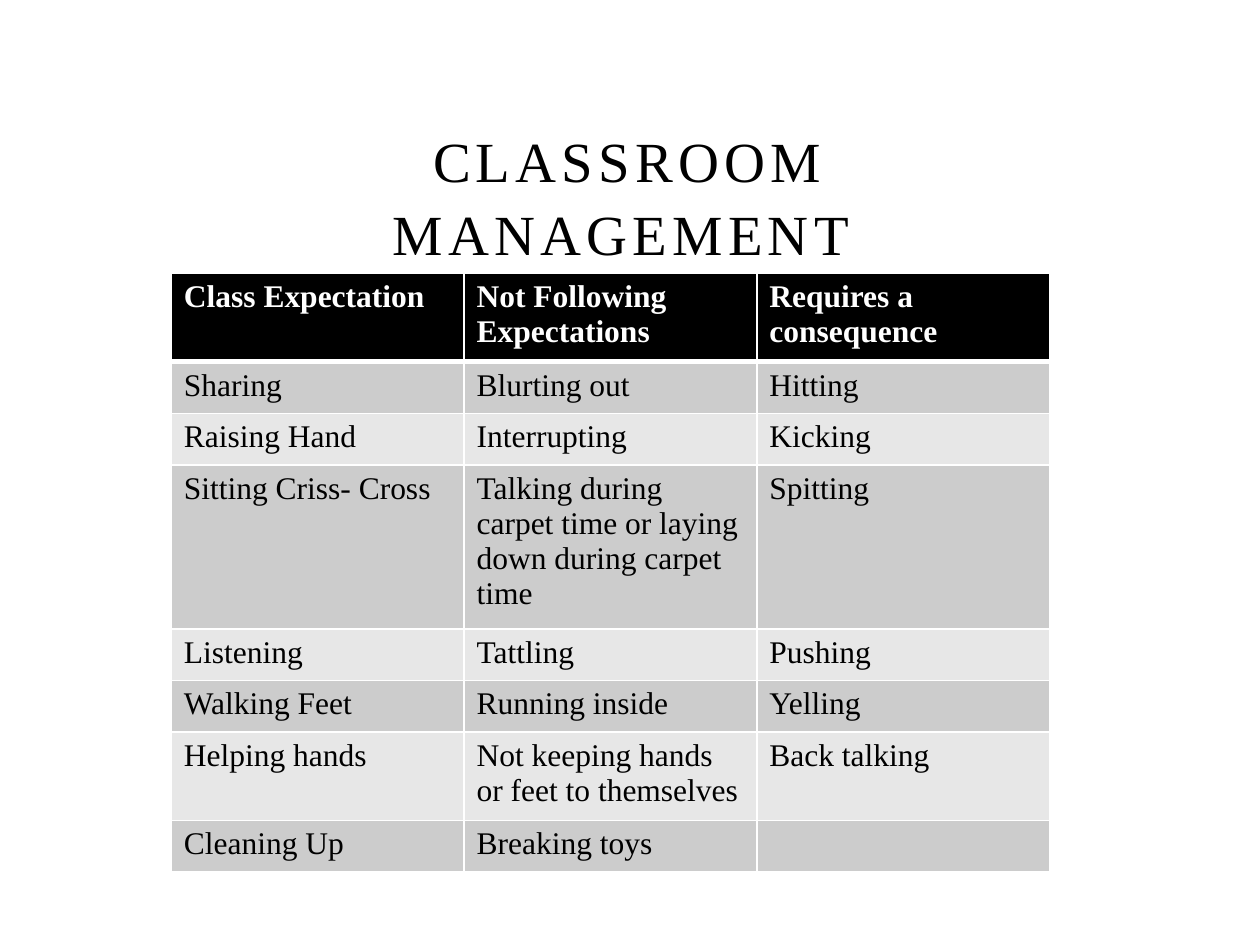
from lxml.etree import SubElement
from pptx import Presentation
from pptx.dml.color import RGBColor
from pptx.enum.text import MSO_ANCHOR, PP_ALIGN
from pptx.oxml.ns import qn
from pptx.util import Inches, Pt

ROWS = [
    ("Class Expectation", "Not Following Expectations", "Requires a consequence"),
    ("Sharing", "Blurting out", "Hitting"),
    ("Raising Hand", "Interrupting", "Kicking"),
    ("Sitting Criss- Cross",
     "Talking during carpet time or laying down during carpet time", "Spitting"),
    ("Listening", "Tattling", "Pushing"),
    ("Walking Feet", "Running inside", "Yelling"),
    ("Helping hands", "Not keeping hands or feet to themselves", "Back talking"),
    ("Cleaning Up", "Breaking toys", ""),
]


def rgb(value):
    return RGBColor.from_string(value)


def write(tf, text, size=18, color="000000", bold=False, align=PP_ALIGN.LEFT,
          tracking=0, line_spacing=None):
    p = tf.paragraphs[0]
    p.alignment = align
    p.line_spacing = line_spacing
    p.font.size = Pt(size)
    if not text:
        return
    r = p.add_run()
    r.text = text
    r.font.name = SlideBuilder.font
    r.font.size = Pt(size)
    r.font.bold = bold
    r.font.color.rgb = rgb(color)
    if tracking:
        r.font._element.set("spc", str(tracking * 100))


def add_border(cell, side, width, color):
    ln = SubElement(cell._tc.get_or_add_tcPr(), qn(f"a:ln{side}"), w=str(Pt(width)))
    fill = SubElement(ln, qn("a:solidFill"))
    SubElement(fill, qn("a:srgbClr"), val=color)


class SlideBuilder:
    """Holds the style of the deck and the slide being built."""

    font = "Times New Roman"
    dark, light = "000000", "FFFFFF"
    bands = ("E7E7E7", "CCCCCC")

    def __init__(self, prs):
        self.s = prs.slides.add_slide(prs.slide_layouts[6])
        self.s.background.fill.solid()
        self.s.background.fill.fore_color.rgb = rgb(self.light)

    def title(self, text, left, top, width, height):
        sp = self.s.shapes.add_textbox(
            Inches(left), Inches(top), Inches(width), Inches(height))
        tf = sp.text_frame
        tf.word_wrap = True
        tf.vertical_anchor = MSO_ANCHOR.BOTTOM
        write(tf, text, size=32.4, color=self.dark, align=PP_ALIGN.CENTER,
              tracking=3, line_spacing=1.08)

    def table(self, rows, left, top, width, header_height, row_height):
        cols = len(rows[0])
        height = header_height + row_height * (len(rows) - 1)
        table = self.s.shapes.add_table(
            len(rows), cols, Inches(left), Inches(top),
            Inches(width), Inches(height)).table
        for i, row in enumerate(rows):
            table.rows[i].height = Inches(row_height if i else header_height)
            for j, text in enumerate(row):
                self.cell(table.cell(i, j), text, i)

    def cell(self, cell, text, row):
        header = row == 0
        widths = {"L": 1, "R": 1, "T": 3 if row == 1 else 1, "B": 3 if header else 1}
        for side, width in widths.items():
            add_border(cell, side, width, self.light)
        cell.fill.solid()
        cell.fill.fore_color.rgb = rgb(self.dark if header else self.bands[row % 2])
        write(cell.text_frame, text, bold=header,
              color=self.light if header else self.dark)


def main():
    prs = Presentation()
    prs.slide_width, prs.slide_height = Inches(10), Inches(7.5)
    builder = SlideBuilder(prs)
    builder.title("CLASSROOM MANAGEMENT ", 1.5, 1.42, 7, 0.75)
    builder.table(ROWS, 1.36, 2.17, 6.97, header_height=0.7, row_height=0.41)
    prs.save("out.pptx")


if __name__ == "__main__":
    main()
